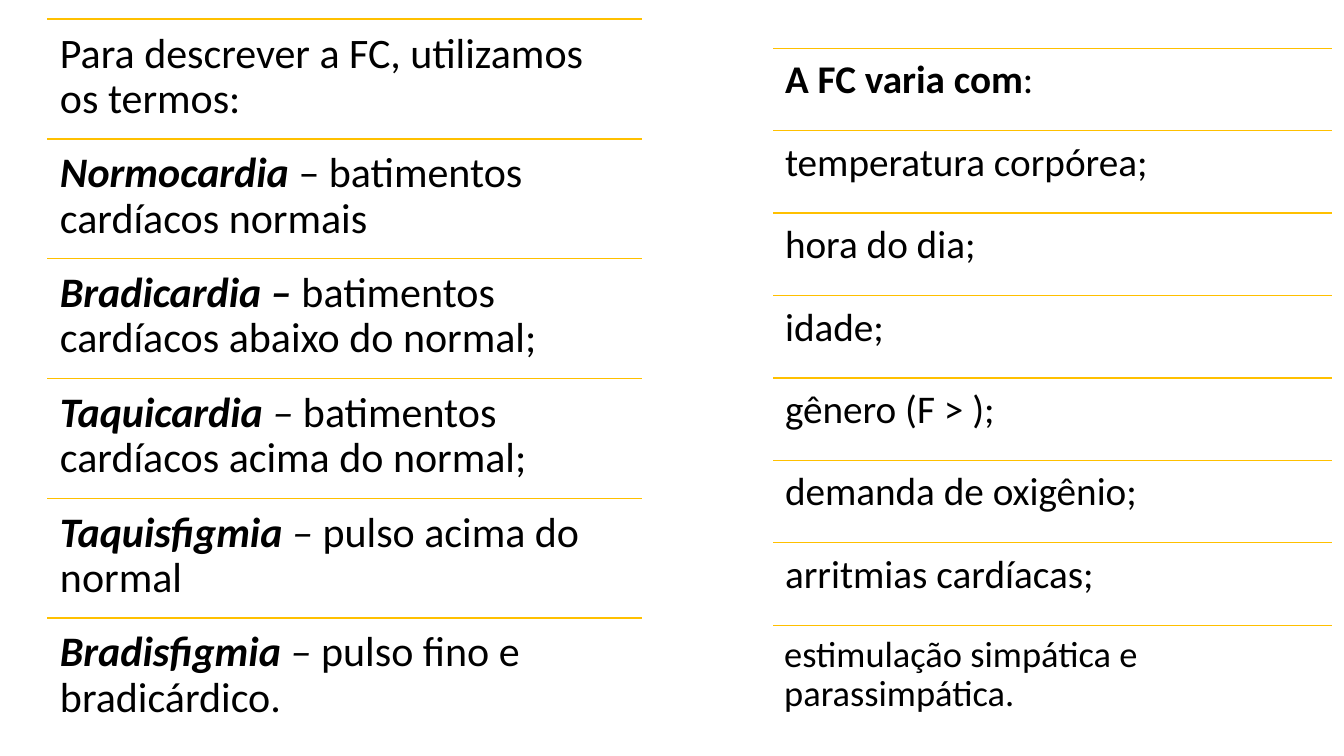
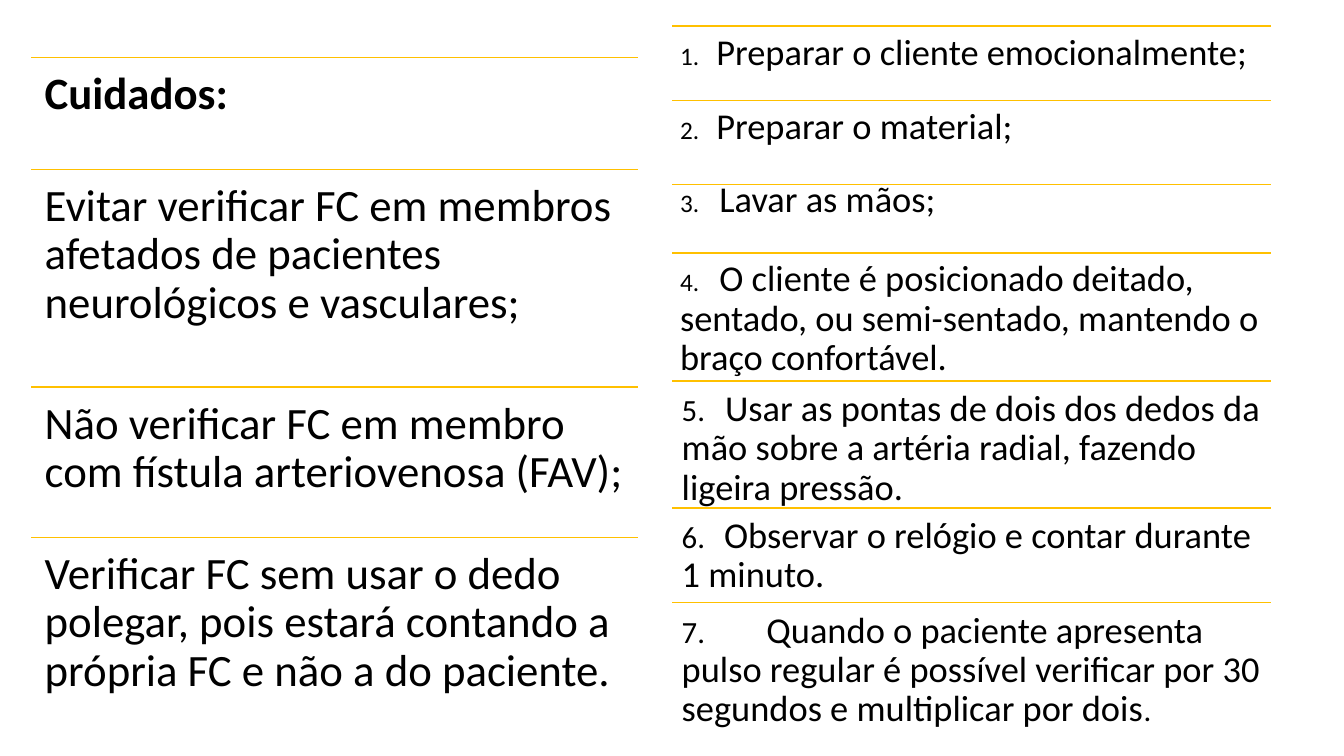
"""Build two slides of ruled lists on heart rate terms, care and procedure."""
from dataclasses import dataclass

from lxml import etree
from pptx import Presentation
from pptx.dml.color import RGBColor
from pptx.enum.shapes import MSO_CONNECTOR
from pptx.enum.text import MSO_ANCHOR
from pptx.oxml.ns import qn
from pptx.util import Inches, Pt

STRAIGHT = MSO_CONNECTOR.STRAIGHT
TOP = MSO_ANCHOR.TOP


@dataclass(frozen=True)
class Theme:
    """Shared look of every list."""
    font: str = "Calibri"
    ink: RGBColor = RGBColor(0, 0, 0)
    rule: RGBColor = RGBColor(0xFF, 0xC0, 0x00)
    rule_width: float = 1
    line_spacing: float = 0.9
    inset_per_point: float = 1 / 240
    terms: int = 30
    factors: int = 28
    care: int = 32
    step: int = 26
    small_number: int = 18
    number: int = 22


THEME = Theme()


def row(*runs, size, tab=None, lift=0):
    """Describe a row; each run is (text, style letters, own size or None)."""
    return {"runs": runs, "size": size, "tab": tab, "lift": lift}


def term(name, dash, meaning, dash_style="i"):
    return row((name, "bi", None), (dash, dash_style, None), (meaning, "", None),
               size=THEME.terms)


def plain(text, size, style=""):
    return row((text, style, None), size=size)


def step(number, text, number_size, tab, lift=0, ending=""):
    runs = [(f"{number}.\t", "", number_size), (text, "", THEME.step)]
    if ending:
        runs.append((ending, "", number_size))
    return row(*runs, size=number_size, tab=tab, lift=lift)


TERMS = [
    plain("Para descrever a FC, utilizamos os termos:", THEME.terms),
    term("Normocardia ", "– ", "batimentos cardíacos normais", ""),
    term("Bradicardia ", "– ", "batimentos cardíacos abaixo do normal;", "bi"),
    term("Taquicardia ", "– ", "batimentos cardíacos acima do normal;"),
    term("Taquisfigmia ", "–", " pulso acima do normal"),
    term("Bradisfigmia", " –", " pulso fino e bradicárdico."),
]
FACTORS = [
    row(("A FC varia com", "b", None), (":", "", None), size=THEME.factors),
    *(plain(text, THEME.factors) for text in (
        "temperatura corpórea;", "hora do dia;", "idade;", "gênero (F > );",
        "demanda de oxigênio;", "arritmias cardíacas;")),
    plain("estimulação simpática e parassimpática.", THEME.step),
]
CARE = [
    plain("Cuidados:", THEME.care, "b"),
    *(plain(text, THEME.care) for text in (
        "Evitar verificar FC em membros afetados de pacientes neurológicos e vasculares;",
        "Não verificar FC em membro com fístula arteriovenosa (FAV);",
        "Verificar FC sem usar o dedo polegar, pois estará contando a própria FC "
        "e não a do paciente.")),
]
STEPS = [
    step(1, "Preparar o cliente emocionalmente;", THEME.small_number, 0.36),
    step(2, "Preparar o material;", THEME.small_number, 0.36),
    step(3, "Lavar as mãos;", THEME.small_number, 0.39, lift=0.11),
    step(4, "O cliente é posicionado deitado, sentado, ou semi-sentado, mantendo "
            "o braço confortável.", THEME.small_number, 0.39),
    step(5, "Usar as pontas de dois dos dedos da mão sobre a artéria radial, "
            "fazendo ligeira pressão.", THEME.number, 0.43),
    step(6, "Observar o relógio e contar durante 1 minuto.", THEME.number, 0.42),
    step(7, "Quando o paciente apresenta pulso regular é possível verificar por "
            "30 segundos e multiplicar por dois", THEME.number, 0.84, ending="."),
]

SLIDES = [
    [
        {"rows": TERMS, "frame": (0.47, 0.19, 5.9, 7.13), "shares": [1] * len(TERMS)},
        {"rows": FACTORS, "frame": (7.67, 0.48, 5.54, 6.54), "shares": [1] * len(FACTORS)},
    ],
    [
        {"rows": CARE, "frame": (0.31, 0.57, 6.02, 6.93),
         "shares": [1.11, 2.16, 1.49, 2.17]},
        {"rows": STEPS, "frame": (6.67, 0.26, 5.94, 6.98),
         "shares": [0.74, 0.83, 0.68, 1.27, 1.26, 0.94, 1.26]},
    ],
]


def add_rule(slide, left, top, width):
    rule = slide.shapes.add_connector(
        STRAIGHT, Inches(left), Inches(top), Inches(left + width), Inches(top))
    rule.line.color.rgb = THEME.rule
    rule.line.width = Pt(THEME.rule_width)
    etree.SubElement(rule.element.spPr, qn("a:effectLst"))


def add_row_text(slide, entry, left, top, width, height):
    box = slide.shapes.add_textbox(
        Inches(left), Inches(top - entry["lift"]), Inches(width), Inches(height))
    frame = box.text_frame
    frame.word_wrap = True
    frame.vertical_anchor = TOP
    inset = Inches(entry["size"] * THEME.inset_per_point)
    frame.margin_left = frame.margin_right = inset
    frame.margin_top = frame.margin_bottom = inset

    paragraph = frame.paragraphs[0]
    if entry["tab"]:
        properties = paragraph._p.get_or_add_pPr()
        stops = etree.SubElement(properties, qn("a:tabLst"))
        etree.SubElement(stops, qn("a:tab"), pos=str(Inches(entry["tab"])), algn="l")
    paragraph.line_spacing = THEME.line_spacing
    paragraph.font.name = THEME.font
    paragraph.font.size = Pt(entry["size"])
    paragraph.font.color.rgb = THEME.ink
    for text, style, size in entry["runs"]:
        run = paragraph.add_run()
        run.text = text
        if "b" in style:
            run.font.bold = True
        if "i" in style:
            run.font.italic = True
        if size:
            run.font.size = Pt(size)


def add_ruled_list(slide, rows, frame, shares):
    left, top, width, total = frame
    for entry, share in zip(rows, shares):
        height = total * share / sum(shares)
        add_rule(slide, left, top, width)
        add_row_text(slide, entry, left, top, width, height)
        top += height


def main():
    deck = Presentation()
    deck.slide_width, deck.slide_height = Inches(13.33), Inches(7.5)
    blank = deck.slide_layouts[6]
    for ruled_lists in SLIDES:
        slide = deck.slides.add_slide(blank)
        for ruled_list in ruled_lists:
            add_ruled_list(slide, **ruled_list)
    deck.save("out.pptx")


if __name__ == "__main__":
    main()
